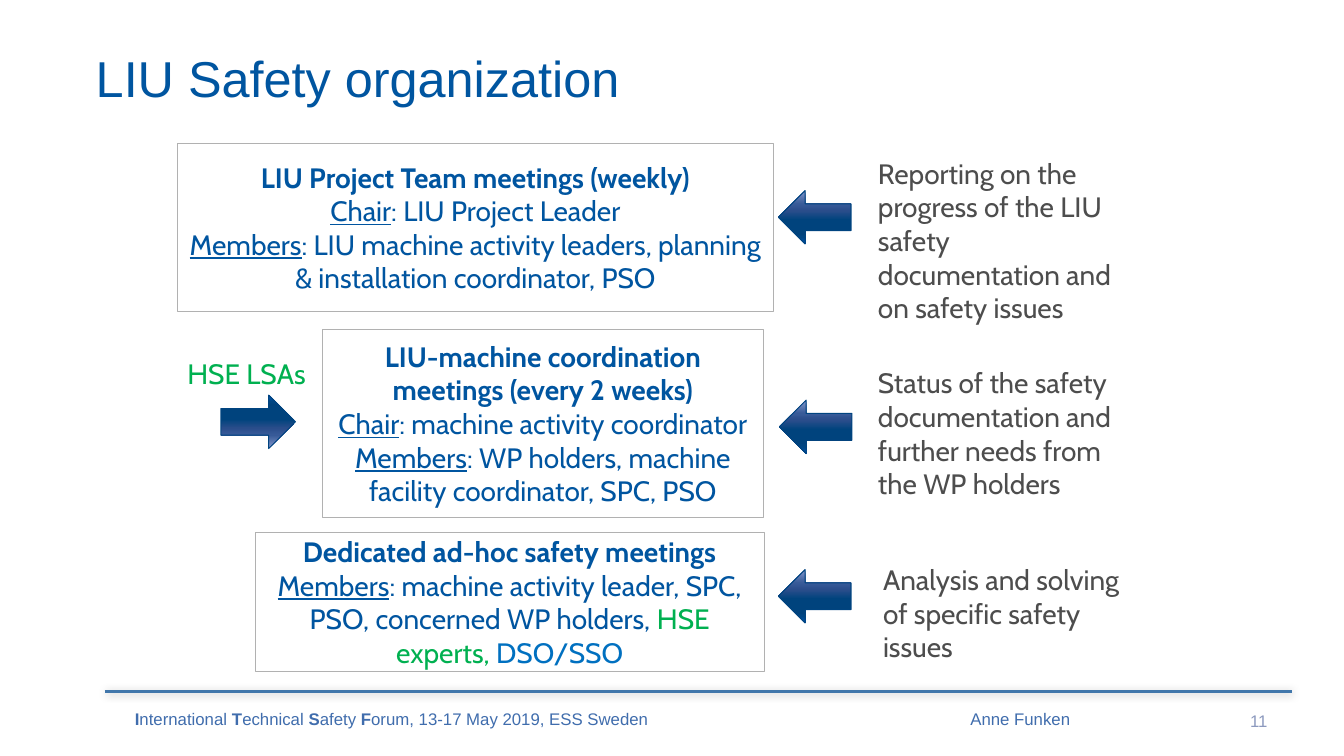
from dataclasses import dataclass

from lxml.etree import SubElement
from pptx import Presentation
from pptx.dml.color import RGBColor as Rgb
from pptx.enum.shapes import MSO_CONNECTOR as Connector, MSO_SHAPE as Shape
from pptx.enum.text import MSO_ANCHOR as Anchor, MSO_AUTO_SIZE as Fit, PP_ALIGN as Align
from pptx.oxml import parse_xml
from pptx.oxml.ns import nsdecls, qn
from pptx.util import Emu, Pt

SCALE = 9144


@dataclass(frozen=True)
class Theme:
    heading: str = "Arial"
    body: str = "Cabin"
    title_size: int = 36
    body_size: int = 20
    footer_size: int = 12
    blue: str = "0055A0"
    bright: str = "0070C0"
    green: str = "00B050"
    grey: str = "4D4D4D"
    footer: str = "406DAD"
    number: str = "8C99BE"
    border: str = "B1B1B1"
    rule: str = "4177AB"
    arrow_line: str = "004480"
    arrow_stops: tuple = (
        (0, "8498CC"), (25, "375A98"), (38, "2A4D8B"), (55, "00437D"),
        (80, "00427C"), (88, "004683"), (100, "0055B9"),
    )


THEME = Theme()
BODY = {"name": THEME.body, "size": Pt(THEME.body_size)}
FOOTER = {"name": THEME.heading, "size": Pt(THEME.footer_size)}
TITLE = {"name": THEME.heading, "size": Pt(THEME.title_size)}
BOLD = {"bold": True}
UNDERLINED = {"underline": True}
INSETS = ("margin_left", "margin_top", "margin_right", "margin_bottom")


def px(*lengths):
    return [Emu(length * SCALE) for length in lengths]


def apply_format(target, values):
    for name, value in values.items():
        setattr(target, name, value)


def write(frame, paragraphs, font, colour, align=Align.LEFT, **frame_format):
    apply_format(frame, {"word_wrap": True, **frame_format})
    for index, spans in enumerate(paragraphs):
        para = frame.add_paragraph() if index else frame.paragraphs[0]
        para.alignment = align
        for text, *styles in spans:
            span = para.add_run()
            span.text = text
            span.font.color.rgb = Rgb.from_string(colour)
            for style in styles:
                if isinstance(style, str):
                    span.font.color.rgb = Rgb.from_string(style)
            apply_format(span.font, font)
            for style in styles:
                if isinstance(style, dict):
                    apply_format(span.font, style)


def add_text(page, place, spans, font, colour, **options):
    box = page.shapes.add_textbox(*px(*place))
    write(box.text_frame, [spans], font, colour, **options)


def add_note(page, place, text, colour=THEME.grey):
    add_text(page, place, [(text,)], BODY, colour, auto_size=Fit.SHAPE_TO_FIT_TEXT)


def add_outline(shape, colour, width):
    shape.line.color.rgb = Rgb.from_string(colour)
    shape.line.width = Pt(width)


def add_meeting(page, place, paragraphs):
    box = page.shapes.add_shape(Shape.RECTANGLE, *px(*place))
    box.shadow.inherit = False
    box.fill.background()
    add_outline(box, THEME.border, 0.75)
    write(box.text_frame, paragraphs, BODY, THEME.blue, Align.CENTER,
          vertical_anchor=Anchor.MIDDLE)


def add_arrow(page, place, rotation=0):
    arrow = page.shapes.add_shape(Shape.LEFT_ARROW, *px(*place))
    arrow.shadow.inherit = False
    arrow.rotation = rotation
    arrow.fill.gradient()
    arrow.fill.gradient_angle = 270
    stops = arrow.fill._fill._gradFill.find(qn("a:gsLst"))
    stops.clear()
    for position, colour in THEME.arrow_stops:
        stop = SubElement(stops, qn("a:gs"), pos=str(position * 1000))
        SubElement(stop, qn("a:srgbClr"), val=colour)
    add_outline(arrow, THEME.arrow_line, 0.75)


def add_rule(page, left, right, top):
    rule = page.shapes.add_connector(Connector.STRAIGHT, *px(left, top, right, top))
    add_outline(rule, THEME.rule, 2.25)
    rule._element.spPr.append(parse_xml(
        f'<a:effectLst {nsdecls("a")}>'
        f'<a:outerShdw blurRad="{Pt(6)}" dist="{Pt(1)}" dir="2700000" rotWithShape="0">'
        '<a:srgbClr val="000000"><a:alpha val="20000"/></a:srgbClr>'
        '</a:outerShdw></a:effectLst>'))


def add_footer(page, place, spans, colour=THEME.footer, align=Align.CENTER):
    add_text(page, place, spans, FOOTER, colour, align=align,
             vertical_anchor=Anchor.MIDDLE)


def main():
    deck = Presentation()
    deck.slide_width, deck.slide_height = px(1333, 750)
    page = deck.slides.add_slide(deck.slide_layouts[6])

    add_rule(page, 104, 1281, 686)
    add_text(page, (90, 32, 1027, 89), [("LIU Safety organization",)], TITLE, THEME.blue,
             vertical_anchor=Anchor.MIDDLE, **dict.fromkeys(INSETS, px(5)[0]))

    add_meeting(page, (176, 142, 591, 167), [
        [("LIU Project Team meetings (weekly)", BOLD)],
        [("Chair", UNDERLINED), (": LIU Project Leader",)],
        [("Members", UNDERLINED),
         (": LIU machine activity leaders, planning & installation coordinator, PSO",)],
    ])
    add_meeting(page, (320, 327, 437, 186), [
        [("LIU-machine coordination meetings (every 2 weeks)", BOLD)],
        [("Chair", UNDERLINED), (": machine activity coordinator",)],
        [("Members", UNDERLINED),
         (": WP holders, machine facility coordinator, SPC, PSO",)],
    ])
    add_meeting(page, (253, 528, 505, 138), [
        [("Dedicated ad-hoc safety meetings", BOLD)],
        [("Members", UNDERLINED),
         (": machine activity leader, SPC, PSO, concerned WP holders, ",),
         ("HSE experts, ", THEME.green), ("DSO/SSO", THEME.bright)],
    ])

    for left, top in ((772, 189), (773, 397), (772, 565)):
        add_arrow(page, (left, top, 72, 53))
    add_arrow(page, (219, 392, 74, 53), rotation=180)

    add_note(page, (176, 349, 160, 44), "HSE LSAs", THEME.green)
    add_note(page, (861, 150, 276, 145),
             "Reporting on the progress of the LIU safety documentation and on safety issues")
    add_note(page, (861, 358, 276, 145),
             "Status of the safety documentation and further needs from the WP holders")
    add_note(page, (866, 553, 276, 111), "Analysis and solving of specific safety issues")

    add_footer(page, (90, 676, 597, 74), [
        ("I", BOLD), ("nternational ",), ("T", BOLD), ("echnical ",),
        ("S", BOLD), ("afety ",), ("F", BOLD), ("orum, 13-17 May 2019, ESS Sweden",),
    ])
    add_footer(page, (849, 676, 326, 74), [("Anne Funken",)])
    add_footer(page, (1194, 695, 73, 40), [("11",)], THEME.number, Align.RIGHT)

    deck.save("out.pptx")


if __name__ == "__main__":
    main()
